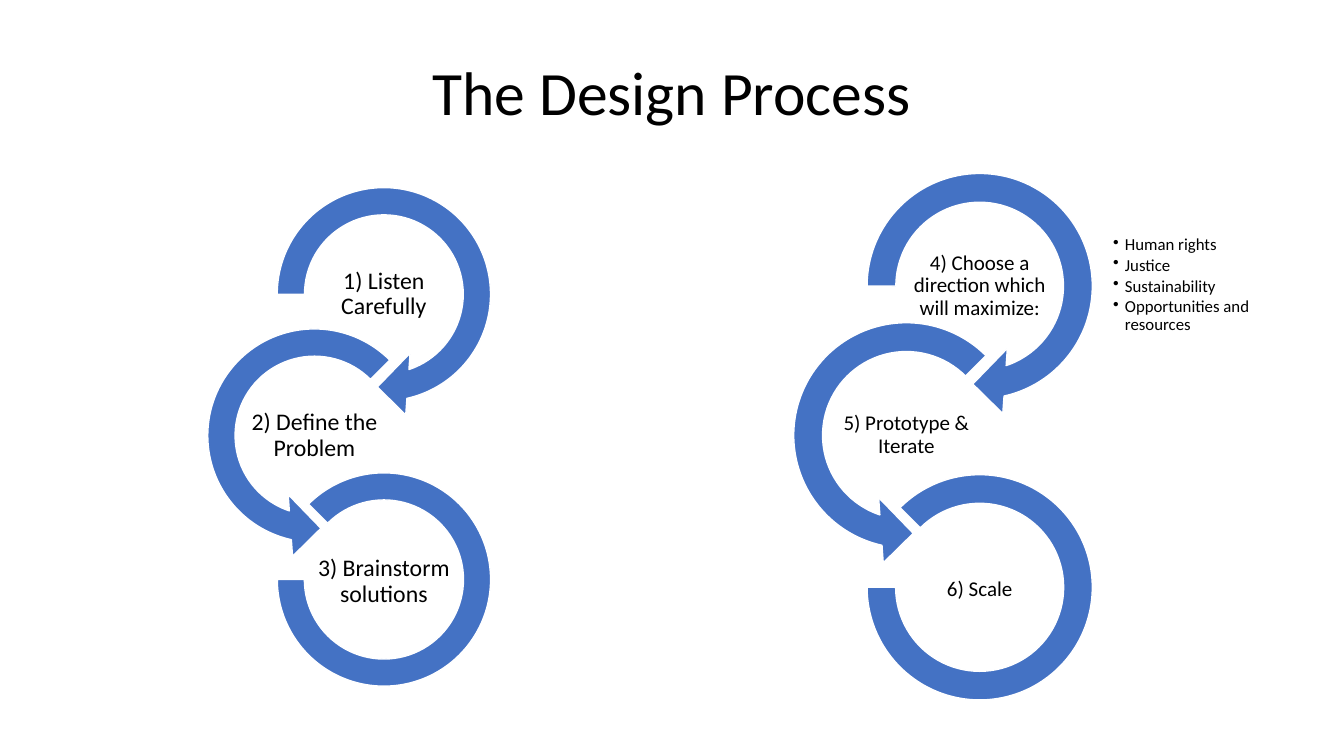
from dataclasses import dataclass

from lxml.etree import SubElement
from pptx import Presentation
from pptx.dml.color import RGBColor
from pptx.enum.shapes import MSO_SHAPE as Preset
from pptx.enum.text import MSO_ANCHOR as Anchor, PP_ALIGN as Align
from pptx.oxml.ns import qn
from pptx.util import Cm, Pt


@dataclass(frozen=True)
class Theme:
    font: str = "Calibri"
    text: RGBColor = RGBColor(0x00, 0x00, 0x00)
    ring: RGBColor = RGBColor(0x44, 0x72, 0xC4)
    outline: RGBColor = RGBColor(0xFF, 0xFF, 0xFF)
    title_size: int = 44
    first_steps_size: int = 17
    last_steps_size: int = 15
    bullet_size: int = 12


@dataclass(frozen=True)
class Link:
    """One ring of a chain; places and sizes are fractions of the arrow size."""
    preset: Preset
    adjustments: tuple
    left: float
    top: float
    size: float
    label_left: float
    label_top: float


CHAIN = (
    Link(Preset.CIRCULAR_ARROW, (0.11, 11.42, 45, 108, 0.125), 0, 0, 1, 0.22, 0.36),
    Link(Preset.LEFT_CIRCULAR_ARROW, (0.11, 11.42, 63, 189, 0.125), -0.28, 0.57, 1, -0.06, 0.93),
    Link(Preset.BLOCK_ARC, (135, 108, 0.127), 0.07, 1.22, 0.86, 0.22, 1.52),
)
LABEL_WIDTH, LABEL_HEIGHT = 0.56, 0.28


class SlideBuilder:
    def __init__(self, slide, theme):
        self.slide = slide
        self.theme = theme

    def text(self, left, top, width, height, lines, size, inset=0.03, bulleted=False):
        box = self.slide.shapes.add_textbox(Cm(left), Cm(top), Cm(width), Cm(height))
        frame = box.text_frame
        frame.word_wrap = True
        frame.vertical_anchor = Anchor.MIDDLE
        frame.margin_left = frame.margin_right = Cm(inset)
        frame.margin_top = frame.margin_bottom = Cm(inset)
        for index, line in enumerate(lines):
            para = frame.paragraphs[0] if index == 0 else frame.add_paragraph()
            para.line_spacing = 0.9
            para.alignment = Align.LEFT if bulleted else Align.CENTER
            if bulleted:
                para.space_after = Pt(1.8)
                self.bullet(para)
            span = para.add_run()
            span.text = line
            span.font.name = self.theme.font
            span.font.size = Pt(size)
            span.font.color.rgb = self.theme.text

    def bullet(self, para):
        properties = para._p.get_or_add_pPr()
        properties.set("marL", str(Cm(0.3)))
        properties.set("indent", str(Cm(-0.3)))
        SubElement(properties, qn("a:buChar")).set("char", "•")

    def ring(self, preset, adjustments, left, top, size):
        shape = self.slide.shapes.add_shape(preset, Cm(left), Cm(top), Cm(size), Cm(size))
        for index, value in enumerate(adjustments):
            shape.adjustments[index] = value
        shape.shadow.inherit = False
        shape.fill.solid()
        shape.fill.fore_color.rgb = self.theme.ring
        shape.line.color.rgb = self.theme.outline
        shape.line.width = Pt(1)

    def chain(self, left, top, unit, labels, label_size):
        """Draw three linked rings whose arrows measure unit centimetres."""
        for link, label in zip(CHAIN, labels):
            self.ring(link.preset, link.adjustments,
                      left + link.left * unit, top + link.top * unit, link.size * unit)
            self.text(left + link.label_left * unit, top + link.label_top * unit,
                      LABEL_WIDTH * unit, LABEL_HEIGHT * unit, [label], label_size)


def main():
    deck = Presentation()
    deck.slide_width, deck.slide_height = Cm(33.87), Cm(19.05)
    theme = Theme()
    page = SlideBuilder(deck.slides.add_slide(deck.slide_layouts[6]), theme)

    page.text(2.33, 0.58, 29.21, 3.68, ["The Design Process"], theme.title_size, inset=0.2)
    page.chain(6.55, 4.29, 6.25,
               ["1) Listen Carefully", "2) Define the Problem", "3) Brainstorm solutions"],
               theme.first_steps_size)
    page.chain(21.39, 3.91, 6.6,
               ["4) Choose a direction which will maximize:", "5) Prototype & Iterate", "6) Scale"],
               theme.last_steps_size)
    page.text(28.02, 5.87, 3.96, 2.64,
              ["Human rights", "Justice", "Sustainability", "Opportunities and resources"],
              theme.bullet_size, bulleted=True)

    deck.save("out.pptx")


if __name__ == "__main__":
    main()
